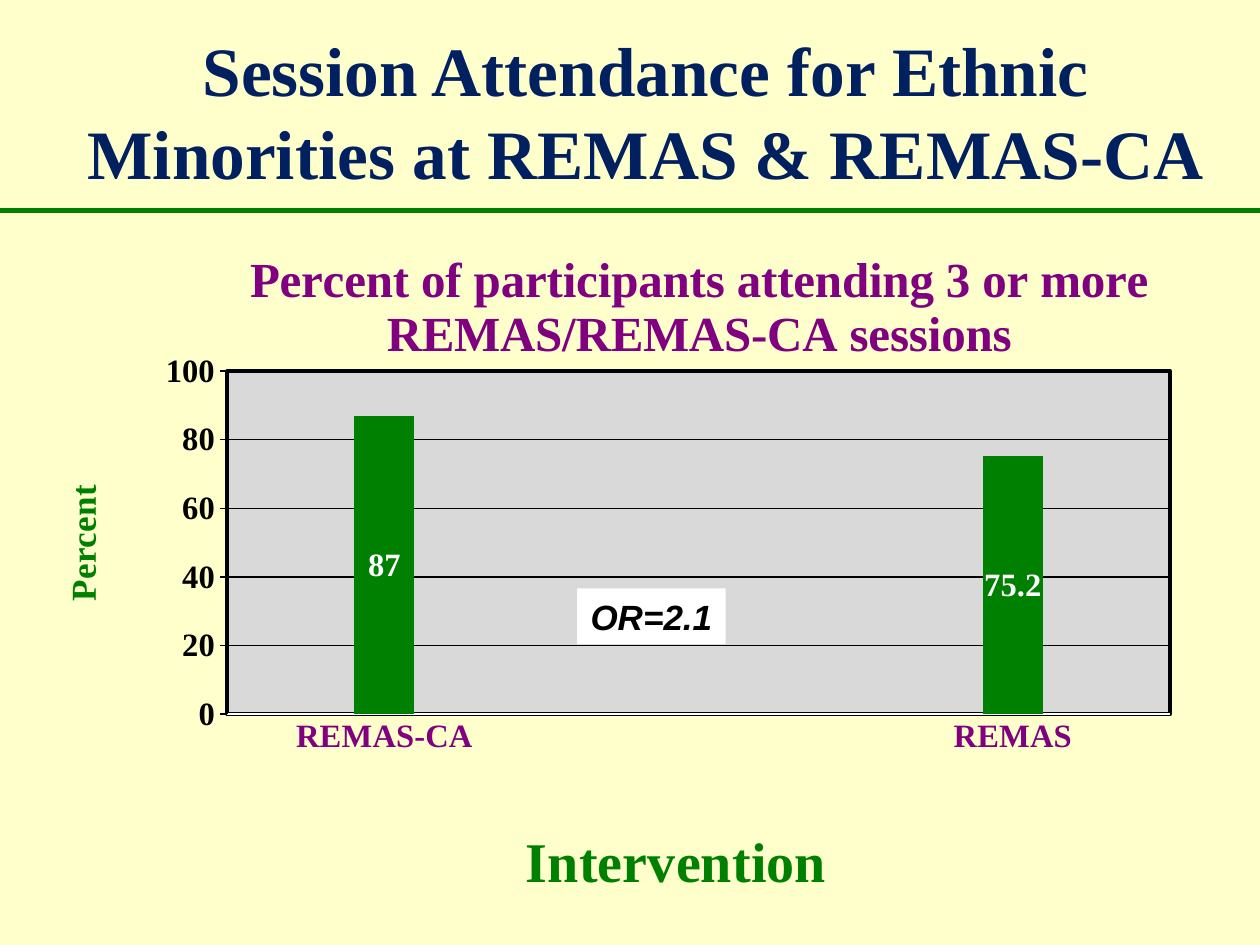
from lxml import etree
from pptx import Presentation
from pptx.chart.data import CategoryChartData
from pptx.dml.color import RGBColor
from pptx.enum.chart import XL_CHART_TYPE, XL_LABEL_POSITION, XL_TICK_MARK
from pptx.enum.shapes import MSO_CONNECTOR, MSO_SHAPE
from pptx.enum.text import MSO_ANCHOR, MSO_AUTO_SIZE, PP_ALIGN
from pptx.oxml import parse_xml
from pptx.oxml.ns import nsdecls, qn
from pptx.util import Inches, Pt

COLUMN = XL_CHART_TYPE.COLUMN_CLUSTERED
LABEL_CENTER = XL_LABEL_POSITION.CENTER
TICK_NONE, TICK_OUT = XL_TICK_MARK.NONE, XL_TICK_MARK.OUTSIDE
RECT, STRAIGHT = MSO_SHAPE.RECTANGLE, MSO_CONNECTOR.STRAIGHT
MIDDLE, CENTER = MSO_ANCHOR.MIDDLE, PP_ALIGN.CENTER
GROW = MSO_AUTO_SIZE.SHAPE_TO_FIT_TEXT

CREAM = RGBColor(0xFF, 0xFF, 0xCC)
NAVY = RGBColor(0x00, 0x20, 0x60)
GREEN = RGBColor(0x00, 0x80, 0x00)
PURPLE = RGBColor(0x80, 0x00, 0x80)
ORANGE = RGBColor(0xFF, 0x99, 0x00)
LAVENDER = RGBColor(0xAA, 0xAA, 0xCA)
GRAY = RGBColor(0xD9, 0xD9, 0xD9)
BLACK = RGBColor(0x00, 0x00, 0x00)
WHITE = RGBColor(0xFF, 0xFF, 0xFF)
SERIF, SANS = "Times New Roman", "Arial"


class SlideBuilder:
    def __init__(self, prs, background):
        self.slide = prs.slides.add_slide(prs.slide_layouts[5])
        self.shapes = self.slide.shapes
        fill = self.slide.background.fill
        fill.solid()
        fill.fore_color.rgb = background

    def style(self, font, color, size, name=SERIF, italic=False):
        values = {"name": name, "size": Pt(size), "bold": True, "italic": italic}
        for key, value in values.items():
            setattr(font, key, value)
        font.color.rgb = color

    def title(self, text, left, top, width, height):
        sp = self.shapes.title
        box = {"left": left, "top": top, "width": width, "height": height}
        for key, value in box.items():
            setattr(sp, key, Inches(value))
        tf = sp.text_frame
        tf.word_wrap = True
        tf.vertical_anchor = MIDDLE
        p = tf.paragraphs[0]
        p.alignment = CENTER
        r = p.add_run()
        r.text = text
        self.style(r.font, NAVY, 39.6)

    def rule(self, left, right, y):
        line = self.shapes.add_connector(
            STRAIGHT, Inches(left), Inches(y), Inches(right), Inches(y))
        line.line.color.rgb = GREEN
        line.line.width = Pt(3.25)
        etree.SubElement(line._element.spPr, qn("a:effectLst"))

    def label(self, text, left, top, width, height):
        sp = self.shapes.add_shape(
            RECT, Inches(left), Inches(top), Inches(width), Inches(height))
        sp.shadow.inherit = False
        sp.fill.solid()
        sp.fill.fore_color.rgb = WHITE
        sp.line.fill.background()
        tf = sp.text_frame
        tf.word_wrap = False
        tf.auto_size = GROW
        r = tf.paragraphs[0].add_run()
        r.text = text
        self.style(r.font, BLACK, 20, SANS, italic=True)

    def layout(self, parent, after, **places):
        for old in parent.findall(qn("c:layout")):
            parent.remove(old)
        inner = '<c:layoutTarget val="inner"/>' if "w" in places else ""
        modes = "".join(f'<c:{key}Mode val="edge"/>' for key in "xy")
        values = "".join(f'<c:{k} val="{v}"/>' for k, v in places.items())
        node = parse_xml(
            f'<c:layout {nsdecls("c")}><c:manualLayout>{inner}{modes}{values}'
            '</c:manualLayout></c:layout>')
        if after is None:
            parent.insert(0, node)
        else:
            after.addnext(node)

    def chart_title(self, owner, text, color, size, x, y):
        title = owner.chart_title if hasattr(owner, "chart_title") else owner.axis_title
        r = title.text_frame.paragraphs[0].add_run()
        r.text = text
        self.style(r.font, color, size)
        node = title._element
        self.layout(node, node.find(qn("c:tx")), x=x, y=y)

    def chart(self, categories, series, left, top, width, height):
        data = CategoryChartData()
        data.categories = categories
        for name, values, *_ in series:
            data.add_series(name, values)
        chart = self.shapes.add_chart(
            COLUMN, Inches(left), Inches(top), Inches(width), Inches(height), data).chart
        chart.has_legend = False
        self.style(chart.font, GREEN, 18.6)
        plot = chart.plots[0]
        for key, value in {"gap_width": 250, "overlap": 13, "vary_by_categories": False}.items():
            setattr(plot, key, value)
        for ser, (_, _, color, label_color) in zip(plot.series, series):
            ser.format.fill.solid()
            ser.format.fill.fore_color.rgb = color
            labels = ser.data_labels
            labels.show_value = True
            labels.position = LABEL_CENTER
            self.style(labels.font, label_color, 18.6)
        self.axes(chart)
        self.plot_area(chart)
        return chart

    def axes(self, chart):
        cat, val = chart.category_axis, chart.value_axis
        for axis, tick, color, line in ((cat, TICK_NONE, PURPLE, WHITE),
                                        (val, TICK_OUT, BLACK, BLACK)):
            axis.major_tick_mark = tick
            axis.minor_tick_mark = TICK_NONE
            self.style(axis.tick_labels.font, color, 18.6)
            axis.format.line.color.rgb = line
            axis.format.line.width = Pt(0.75)
        for key, value in {"minimum_scale": 0, "maximum_scale": 100, "major_unit": 20,
                           "has_major_gridlines": True}.items():
            setattr(val, key, value)
        grid = val.major_gridlines.format.line
        grid.color.rgb = BLACK
        grid.width = Pt(0.75)

    def plot_area(self, chart):
        area = chart._chartSpace.chart.plotArea
        self.layout(area, None, x=0.169, y=0.223, w=0.755, h=0.476)
        area.append(parse_xml(
            f'<c:spPr {nsdecls("c", "a")}>'
            f'<a:solidFill><a:srgbClr val="{GRAY}"/></a:solidFill>'
            f'<a:ln w="{Pt(2.25)}"><a:solidFill><a:srgbClr val="{BLACK}"/></a:solidFill></a:ln>'
            '</c:spPr>'))


def main():
    prs = Presentation()
    prs.slide_width, prs.slide_height = Inches(10), Inches(7.5)
    s = SlideBuilder(prs, CREAM)
    s.title("Session Attendance for Ethnic Minorities at REMAS & REMAS-CA",
            0.25, 0.25, 9.75, 1.25)
    empty = (None, None, None)
    chart = s.chart(
        ["REMAS-CA", "", "REMAS"],
        [("Series 1", empty, ORANGE, GREEN),
         ("Series 2", (87, None, 75.2), GREEN, WHITE),
         ("Series 3", empty, LAVENDER, GREEN)],
        0.13, 1.67, 9.91, 5.72)
    s.chart_title(chart, "Percent of participants attending 3 or more REMAS/REMAS-CA sessions",
                  PURPLE, 28, 0.18, 0.04)
    s.chart_title(chart.category_axis, "Intervention", GREEN, 32, 0.4, 0.84)
    s.chart_title(chart.value_axis, "Percent ", GREEN, 20, 0.03, 0.36)
    s.rule(0, 10.17, 1.67)
    s.label("OR=2.1", 4.58, 4.67, 1.18, 0.44)
    prs.save("out.pptx")


if __name__ == "__main__":
    main()
